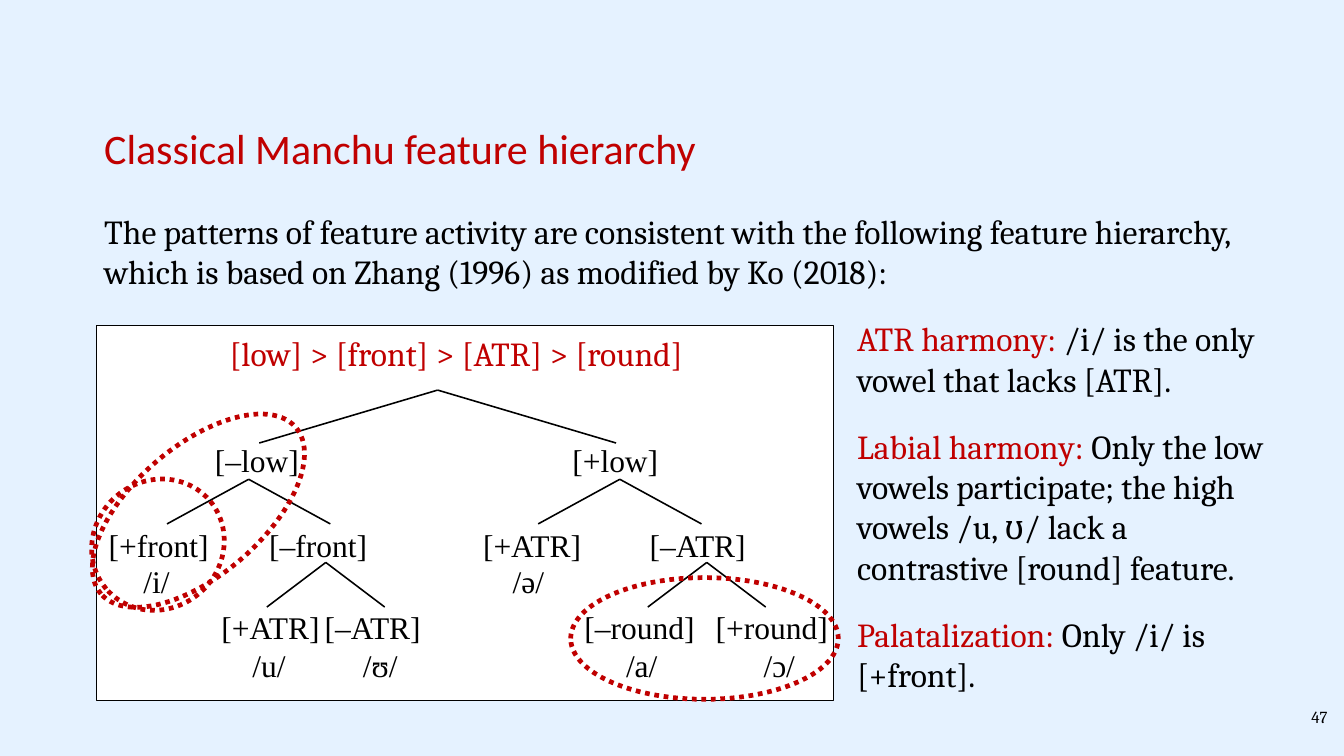
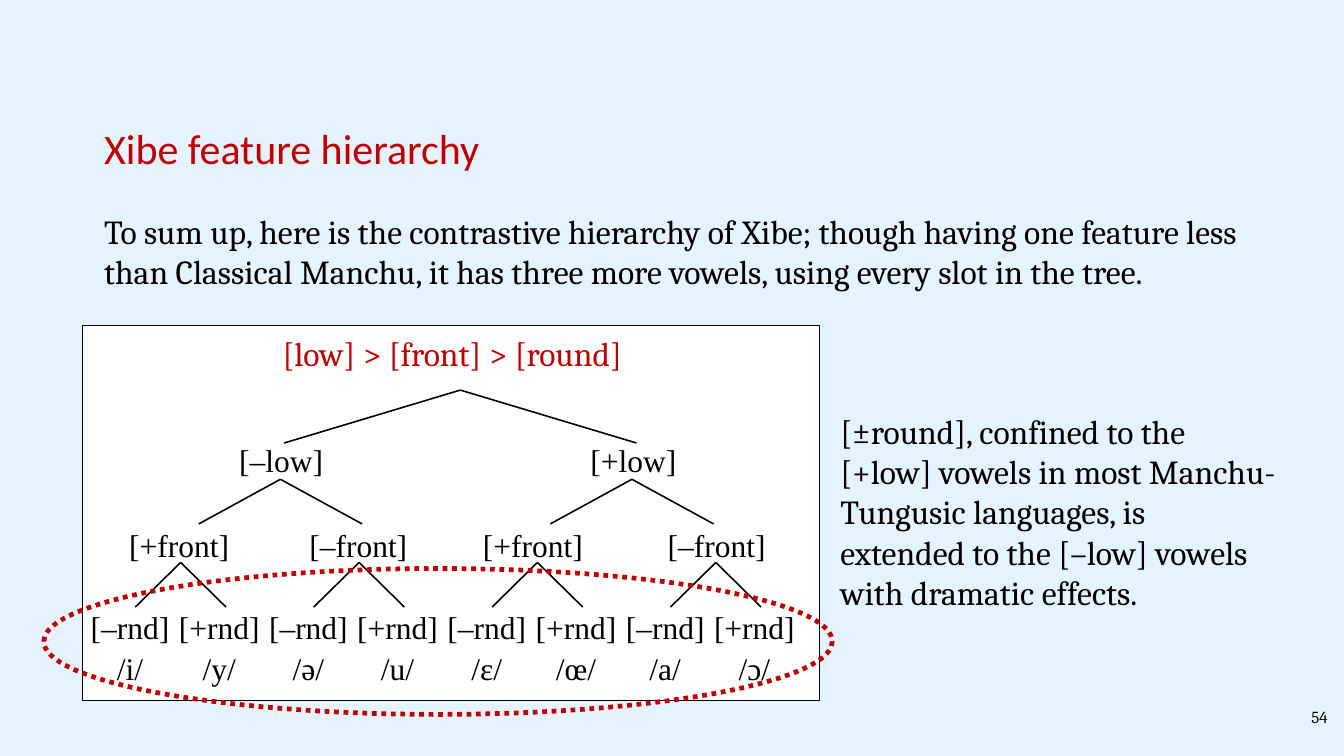
import dataclasses
import typing

import lxml.etree
import pptx
import pptx.dml.color
import pptx.enum.dml
import pptx.enum.shapes
import pptx.enum.text
import pptx.oxml.ns
import pptx.util

Inches = pptx.util.Inches
Pt = pptx.util.Pt
Align = pptx.enum.text.PP_ALIGN

BACKGROUND = "E5F2FF"
ACCENT = "C00000"
BLACK = "000000"
WHITE = "FFFFFF"
TITLE_FONT = "Calibri"
BODY_FONT = "Cambria"
TREE_FONT = "Times New Roman"

# Wide enough for the longest label, "[+round]", on one line
LABEL_WIDTH = 1.8
LABEL_HEIGHT = 0.61
# Tops of the label rows and (top, bottom) of the branches above each of them
LOW_ROW, MIDDLE_ROW, LEAF_ROW = 5.79, 6.91, 7.99
BRANCH_LEVELS = [(5.16, 5.86), (6.34, 6.93), (7.44, 8.03)]


class Span(typing.NamedTuple):
    text: str
    color: str = BLACK


class Box(typing.NamedTuple):
    left: float
    top: float
    width: float
    height: float

    def lengths(self) -> list[pptx.util.Length]:
        return [Inches(value) for value in self]


class Label(typing.NamedTuple):
    text: str
    center: float
    top: float


class Branch(typing.NamedTuple):
    apex: float
    half_width: float
    level: int


class Ring(typing.NamedTuple):
    box: Box
    rotation: float = 0


class Comment(typing.NamedTuple):
    box: Box
    spans: list[Span]


@dataclasses.dataclass
class HierarchySlide:
    title: str
    introduction: str
    number: str
    panel_left: float
    ranking: str
    ranking_box: Box
    branches: list[Branch]
    labels: list[Label]
    comments: list[Comment]
    rings: list[Ring]


def rgb(color: str) -> pptx.dml.color.RGBColor:
    return pptx.dml.color.RGBColor.from_string(color)


def add_text(slide, box: Box, spans: list[Span], size: float, font: str = BODY_FONT,
             align=Align.LEFT, wrap: bool = True) -> None:
    frame = slide.shapes.add_textbox(*box.lengths()).text_frame
    frame.word_wrap = wrap
    frame.auto_size = pptx.enum.text.MSO_AUTO_SIZE.SHAPE_TO_FIT_TEXT
    paragraph = frame.paragraphs[0]
    paragraph.alignment = align
    for span in spans:
        run = paragraph.add_run()
        run.text = span.text
        run.font.size = Pt(size)
        run.font.name = font
        run.font.color.rgb = rgb(span.color)


def add_panel(slide, left: float) -> None:
    panel = slide.shapes.add_shape(pptx.enum.shapes.MSO_SHAPE.RECTANGLE,
                                   *Box(left, 4.3, 9.75, 4.97).lengths())
    panel.shadow.inherit = False
    panel.fill.solid()
    panel.fill.fore_color.rgb = rgb(WHITE)
    panel.line.color.rgb = rgb(BLACK)
    panel.line.width = Pt(0.75)


def add_branch(slide, branch: Branch) -> None:
    """Draw the two lines that run down from the apex."""
    top, bottom = BRANCH_LEVELS[branch.level]
    for side in (-1, 1):
        line = slide.shapes.add_connector(
            pptx.enum.shapes.MSO_CONNECTOR.STRAIGHT, Inches(branch.apex), Inches(top),
            Inches(branch.apex + side * branch.half_width), Inches(bottom))
        line.line.color.rgb = rgb(BLACK)
        line.line.width = Pt(1.5)
        properties = line._element.spPr
        lxml.etree.SubElement(properties, pptx.oxml.ns.qn("a:effectLst"))


def add_label(slide, label: Label) -> None:
    box = Box(label.center - LABEL_WIDTH / 2, label.top, LABEL_WIDTH, LABEL_HEIGHT)
    add_text(slide, box, [Span(label.text)], 30, TREE_FONT, Align.CENTER, wrap=False)


def add_ring(slide, ring: Ring) -> None:
    ellipse = slide.shapes.add_shape(pptx.enum.shapes.MSO_SHAPE.OVAL, *ring.box.lengths())
    ellipse.rotation = ring.rotation
    ellipse.shadow.inherit = False
    ellipse.fill.background()
    ellipse.line.color.rgb = rgb(ACCENT)
    ellipse.line.width = Pt(4.5)
    ellipse.line.dash_style = pptx.enum.dml.MSO_LINE.ROUND_DOT


def add_hierarchy_slide(presentation, content: HierarchySlide) -> None:
    slide = presentation.slides.add_slide(presentation.slide_layouts[6])
    slide.background.fill.solid()
    slide.background.fill.fore_color.rgb = rgb(BACKGROUND)

    add_text(slide, Box(1.28, 1.57, 9.69, 0.77), [Span(content.title, ACCENT)], 40, TITLE_FONT)
    add_text(slide, Box(1.28, 2.74, 15.75, 1.18), [Span(content.introduction)], 32)
    add_panel(slide, content.panel_left)
    add_text(slide, content.ranking_box, [Span(content.ranking, ACCENT)], 32, wrap=False)
    for branch in content.branches:
        add_branch(slide, branch)
    for label in content.labels:
        add_label(slide, label)
    for comment in content.comments:
        add_text(slide, comment.box, comment.spans, 32)
    for ring in content.rings:
        add_ring(slide, ring)
    add_text(slide, Box(15.58, 9.3, 2.08, 0.5), [Span(content.number)], 16, align=Align.RIGHT)


def manchu_slide() -> HierarchySlide:
    middle_vowel_row, leaf_vowel_row = 7.39, 8.49
    return HierarchySlide(
        title="Classical Manchu feature hierarchy",
        introduction="The patterns of feature activity are consistent with the following "
                     "feature hierarchy, which is based on Zhang (1996) as modified by Ko (2018):",
        number="47",
        panel_left=1.28,
        ranking="[low] > [front] > [ATR] > [round]",
        ranking_box=Box(2.94, 4.36, 6.43, 0.64),
        branches=[
            Branch(5.79, 2.36, 0),
            Branch(3.29, 1.08, 1), Branch(8.2, 1.08, 1),
            Branch(4.31, 0.78, 2), Branch(9.35, 0.78, 2),
        ],
        labels=[
            Label("[–low]", 3.4, LOW_ROW), Label("[+low]", 8.14, LOW_ROW),
            Label("[+front]", 2.1, MIDDLE_ROW), Label("[–front]", 4.21, MIDDLE_ROW),
            Label("[+ATR]", 7.04, MIDDLE_ROW), Label("[–ATR]", 9.23, MIDDLE_ROW),
            Label("/i/", 2.07, middle_vowel_row), Label("/ə/", 6.99, middle_vowel_row),
            Label("[+ATR]", 3.58, LEAF_ROW), Label("[–ATR]", 4.93, LEAF_ROW),
            Label("[–round]", 8.46, LEAF_ROW), Label("[+round]", 10.21, LEAF_ROW),
            Label("/u/", 3.56, leaf_vowel_row), Label("/ʊ/", 5.03, leaf_vowel_row),
            Label("/a/", 8.49, leaf_vowel_row), Label("/ɔ/", 10.31, leaf_vowel_row),
        ],
        comments=[
            Comment(Box(11.24, 4.16, 5.71, 1.18), [
                Span("ATR harmony:", ACCENT),
                Span(" /i/ is the only vowel that lacks [ATR].")]),
            Comment(Box(11.24, 5.58, 5.71, 2.26), [
                Span("Labial harmony:", ACCENT),
                Span(" Only the low vowels participate; the high vowels /u, ʊ/ "
                     "lack a contrastive [round] feature.")]),
            Comment(Box(11.24, 8.07, 5.71, 1.18), [
                Span("Palatalization:", ACCENT),
                Span(" Only /i/ is [+front].")]),
        ],
        rings=[
            Ring(Box(0.93, 5.9, 3.39, 1.71), 319.5),
            Ring(Box(7.55, 7.64, 3.54, 1.61)),
            Ring(Box(1.19, 6.36, 1.8, 1.69), 319.5),
        ],
    )


def xibe_slide() -> HierarchySlide:
    vowels = ["/i/", "/y/", "/ə/", "/u/", "/ɛ/", "/œ/", "/a/", "/ɔ/"]
    vowel_row = 8.54
    first_leaf, leaf_step = 1.72, 1.18

    branches = [Branch(6.09, 2.33, 0), Branch(3.71, 1.08, 1), Branch(8.36, 1.08, 1)]
    branches += [Branch(2.39 + pair * 2 * leaf_step, 0.6, 2) for pair in range(4)]
    labels = [
        Label("[–low]", 3.72, LOW_ROW), Label("[+low]", 8.38, LOW_ROW),
        Label("[+front]", 2.37, MIDDLE_ROW), Label("[–front]", 4.74, MIDDLE_ROW),
        Label("[+front]", 7.05, MIDDLE_ROW), Label("[–front]", 9.48, MIDDLE_ROW),
    ]
    for index, vowel in enumerate(vowels):
        center = first_leaf + index * leaf_step
        labels.append(Label("[+rnd]" if index % 2 else "[–rnd]", center, LEAF_ROW))
        labels.append(Label(vowel, center, vowel_row))

    return HierarchySlide(
        title="Xibe feature hierarchy",
        introduction="To sum up, here is the contrastive hierarchy of Xibe; though having one "
                     "feature less than Classical Manchu, it has three more vowels, using every "
                     "slot in the tree.",
        number="54",
        panel_left=1.09,
        ranking="[low] > [front] > [round]",
        ranking_box=Box(3.64, 4.36, 5.03, 0.64),
        branches=branches,
        labels=labels,
        comments=[Comment(Box(11.02, 5.38, 5.94, 2.79), [
            Span("[±round], confined to the [+low] vowels in most Manchu-Tungusic languages, "
                 "is extended to the [–low] vowels with dramatic effects.")])],
        rings=[Ring(Box(0.58, 7.52, 10.43, 1.93))],
    )


def main() -> None:
    presentation = pptx.Presentation()
    presentation.slide_width = Inches(17.78)
    presentation.slide_height = Inches(10)
    for content in (manchu_slide(), xibe_slide()):
        add_hierarchy_slide(presentation, content)
    presentation.save("out.pptx")


if __name__ == "__main__":
    main()
